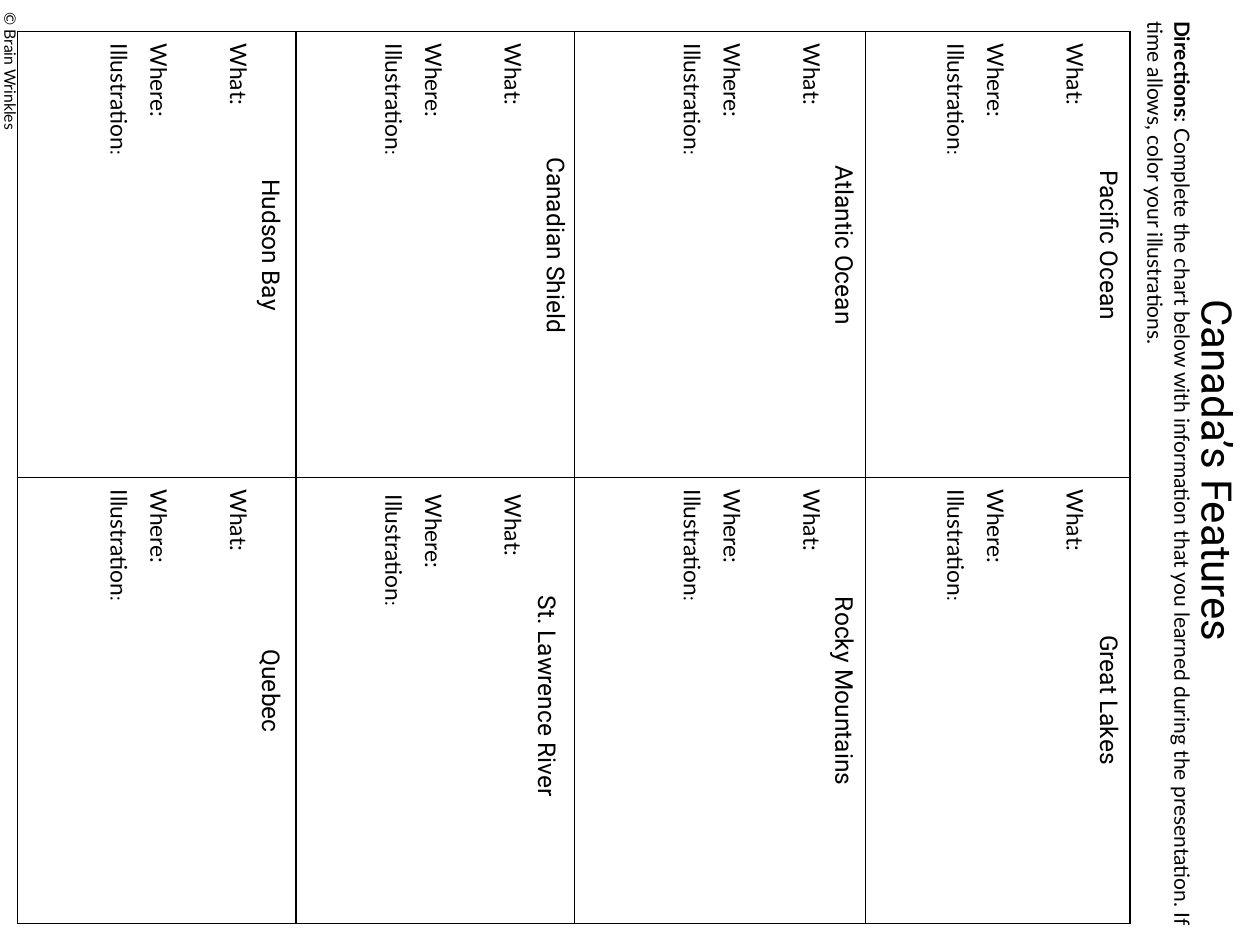
from lxml.etree import SubElement
from pptx import Presentation
from pptx.dml.color import RGBColor
from pptx.enum.text import MSO_ANCHOR, PP_ALIGN
from pptx.oxml.ns import qn
from pptx.util import Inches, Pt

INK = "000000"
COLS = [2.21, 2.21, 2.31, 2.1]
ROW = 3.54
TOP = 0.25

# Chart columns, read from the right: left of prompts, left of names, the two names
FEATURES = [
    (7.18, 8.4, ["Pacific Ocean", "Great Lakes"]),
    (5.09, 6.3, ["Atlantic Ocean", "Rocky Mountains"]),
    (2.72, 4.01, ["Canadian Shield", "St. Lawrence River"]),
    (0.54, 1.75, ["Hudson Bay", "Quebec"]),
]
# Small offsets: name across, name down, prompts down
SHIFTS = {"Great Lakes": (0, 0.07, 0), "St. Lawrence River": (-0.07, 0.04, 0.04)}


def color(code):
    return RGBColor.from_string(code)


def turn(shape, left, top, width, height):
    """Turn a shape by 90 degrees so that it fills the given upright box."""
    shape.left = Inches(left + (width - height) / 2)
    shape.top = Inches(top + (height - width) / 2)
    shape.width, shape.height = Inches(height), Inches(width)
    shape.rotation = 90


def style(run, font, size, bold=False):
    run.font.name, run.font.size, run.font.bold = font, Pt(size), bold
    run.font.color.rgb = color(INK)


def add_text(slide, box, lines, font, size, align=PP_ALIGN.LEFT, gap=6, line=1.07):
    """Add a turned text box and return its paragraphs."""
    shape = slide.shapes.add_textbox(0, 0, 0, 0)
    turn(shape, *box)
    frame = shape.text_frame
    frame.word_wrap = True
    frame.text = "\n".join(lines)
    for para in frame.paragraphs:
        para.alignment, para.line_spacing = align, line
        para.space_after = Pt(gap)
        for run in para.runs:
            style(run, font, size)
    return frame.paragraphs


def add_title(slide, box):
    title = slide.shapes.title
    turn(title, *box)
    frame = title.text_frame
    frame.text = "Canada’s Features"
    frame.word_wrap = False
    frame.vertical_anchor = MSO_ANCHOR.TOP
    frame.margin_left = frame.margin_right = Inches(0.07)
    frame.margin_top = frame.margin_bottom = Inches(0.04)
    para = frame.paragraphs[0]
    para.alignment = PP_ALIGN.CENTER
    style(para.runs[0], "Roboto", 24)


def add_directions(slide, box):
    para = add_text(slide, box, ["Directions"], "Lato", 12)[0]
    para.runs[0].font.bold = True
    rest = para.add_run()
    rest.text = (": Complete the chart below with information that you learned "
                 "during the presentation. If time allows, color your illustrations.")
    style(rest, "Lato", 12)


def add_border(cell):
    props = cell._tc.get_or_add_tcPr()
    for side in ("a:lnL", "a:lnR", "a:lnT", "a:lnB"):
        line = SubElement(props, qn(side), w=str(Pt(1)))
        fill = SubElement(line, qn("a:solidFill"))
        SubElement(fill, qn("a:srgbClr"), val=INK)


def add_grid(slide, left, top):
    frame = slide.shapes.add_table(2, len(COLS), Inches(left), Inches(top),
                                   Inches(sum(COLS)), Inches(2 * ROW))
    table = frame.table
    table.first_row = table.horz_banding = False
    for col, width in zip(table.columns, COLS):
        col.width = Inches(width)
    for row in table.rows:
        row.height = Inches(ROW)
    for cell in table.iter_cells():
        add_border(cell)
        cell.fill.background()


def add_feature(slide, name, name_left, left, top):
    """Add the name of a feature and its prompts to one cell."""
    across, down, drop = SHIFTS.get(name, (0, 0, 0))
    add_text(slide, (name_left + across, top + 0.37 + down, 0.59, 2.65),
             [name], "Roboto", 14, PP_ALIGN.CENTER)
    paras = add_text(slide, (left, top + drop, 1.53, 2.65),
                     ["What:", "Where:", "Illustration"], "Lato", 13)
    paras[0].space_after = Pt(28.8)
    colon = paras[2].add_run()
    colon.text = ":"
    style(colon, "Lato", 10.5)


def main():
    deck = Presentation()
    deck.slide_width, deck.slide_height = Inches(10), Inches(7.5)
    slide = deck.slides.add_slide(deck.slide_layouts[5])
    add_title(slide, (9.43, 2, 0.48, 3.47))
    add_grid(slide, 0.14, TOP)
    add_directions(slide, (8.78, 0.07, 0.77, 7.5))
    for left, name_left, names in FEATURES:
        for row, name in enumerate(names):
            add_feature(slide, name, name_left, left, TOP + row * ROW)
    add_text(slide, (-0.04, 0, 0.25, 2.18), ["© Brain Wrinkles"], "Lato", 9,
             gap=0, line=1)
    deck.save("out.pptx")


if __name__ == "__main__":
    main()
